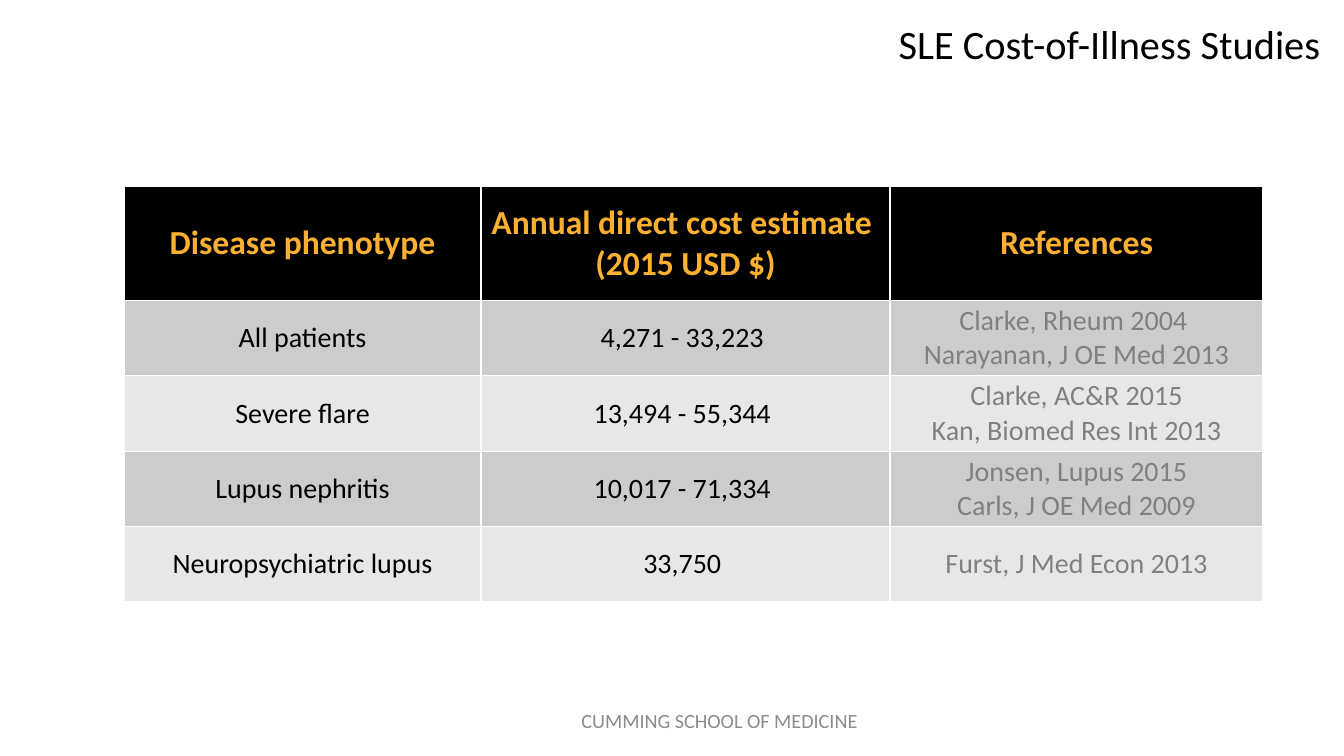
import pptx
import pptx.dml.color
import pptx.enum.text
import pptx.util

Cm, Pt = pptx.util.Cm, pptx.util.Pt
ALIGN = pptx.enum.text.PP_ALIGN
MIDDLE = pptx.enum.text.MSO_ANCHOR.MIDDLE

# Content
TITLE = "SLE Cost-of-Illness Studies"
SCHOOL = "CUMMING SCHOOL OF MEDICINE"
STUDIES = [
    ("Disease phenotype", "Annual direct cost estimate \n(2015 USD $)", "References"),
    ("All patients", "4,271 - 33,223 ", "Clarke, Rheum 2004 \nNarayanan, J OE Med 2013"),
    ("Severe flare", "13,494 - 55,344 ", "Clarke, AC&R 2015\nKan, Biomed Res Int 2013"),
    ("Lupus nephritis", "10,017 - 71,334 ", "Jonsen, Lupus 2015\nCarls, J OE Med 2009"),
    ("Neuropsychiatric lupus", "33,750 ", "Furst, J Med Econ 2013"),
]
COLUMN_WIDTHS = [8.99, 10.31, 9.4]
HEADER_HEIGHT, STUDY_HEIGHT = 2.87, 1.9
HEADER_FILL, BANDS = "000000", ["CCCCCC", "E7E7E7"]
HEADER_INK, STUDY_INKS = "FBB031", ["000000", "000000", "808080"]


def colour(code):
    return pptx.dml.color.RGBColor.from_string(code)


def style_text(frame, size, ink, align, bold=False):
    for paragraph in frame.paragraphs:
        paragraph.alignment = align
        paragraph.font.name = "Calibri"
        paragraph.font.size = Pt(size)
        paragraph.font.bold = bold
        paragraph.font.color.rgb = colour(ink)


deck = pptx.Presentation()
deck.slide_width, deck.slide_height = Cm(33.87), Cm(19.05)
slide = deck.slides.add_slide(deck.slide_layouts[5])

# Title
title = slide.shapes.title
title.left, title.top, title.width, title.height = Cm(5.72), Cm(0), Cm(27.81), Cm(2.21)
title.text_frame.text = TITLE
title.text_frame.vertical_anchor = MIDDLE
title.text_frame.auto_size = pptx.enum.text.MSO_AUTO_SIZE.NONE
style_text(title.text_frame, 28.8, "000000", ALIGN.RIGHT)

# School name at the foot
school = slide.shapes.add_textbox(Cm(7.52), Cm(17.65), Cm(21.23), Cm(1.02)).text_frame
school.word_wrap = True
school.vertical_anchor = MIDDLE
school.text = SCHOOL
style_text(school, 14.4, "8C8C8C", ALIGN.CENTER)

# Cost table
row_heights = [HEADER_HEIGHT] + [STUDY_HEIGHT] * (len(STUDIES) - 1)
costs = slide.shapes.add_table(
    len(STUDIES), len(COLUMN_WIDTHS), Cm(3.13), Cm(4.7),
    Cm(sum(COLUMN_WIDTHS)), Cm(sum(row_heights))).table
for column, width in zip(costs.columns, COLUMN_WIDTHS):
    column.width = Cm(width)
for r, (study, height) in enumerate(zip(STUDIES, row_heights)):
    costs.rows[r].height = Cm(height)
    is_header = r == 0
    for c, wording in enumerate(study):
        cell = costs.cell(r, c)
        cell.text = wording
        cell.vertical_anchor = MIDDLE
        cell.margin_left = cell.margin_right = Cm(0.18)
        cell.margin_top = cell.margin_bottom = Cm(0)
        cell.fill.solid()
        cell.fill.fore_color.rgb = colour(HEADER_FILL if is_header else BANDS[(r - 1) % 2])
        style_text(cell.text_frame, 24 if is_header else 20,
                   HEADER_INK if is_header else STUDY_INKS[c], ALIGN.CENTER, is_header)

deck.save("out.pptx")
